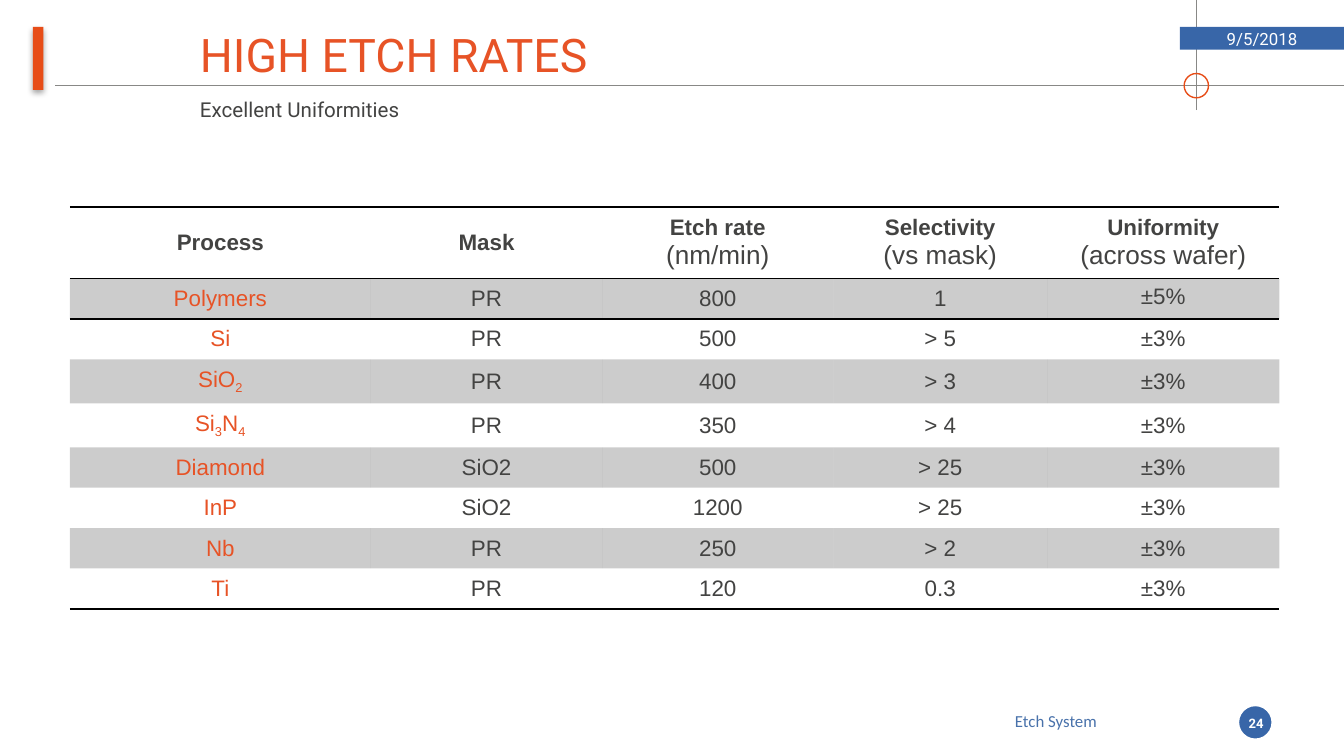
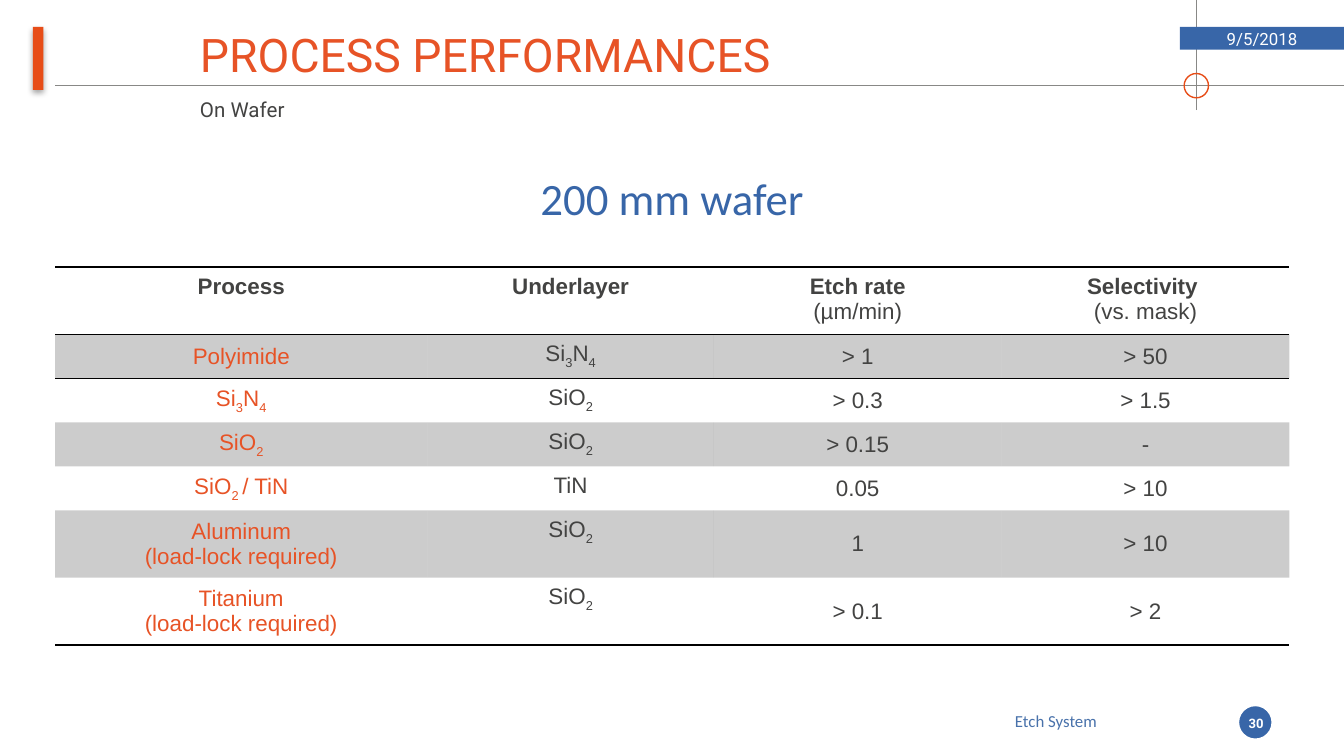
from dataclasses import dataclass
from typing import Any, Optional

import lxml.etree
import pptx
import pptx.dml.color
import pptx.enum.shapes
import pptx.enum.text
import pptx.oxml
import pptx.oxml.ns
import pptx.util

Cm = pptx.util.Cm
Pt = pptx.util.Pt
qn = pptx.oxml.ns.qn
Shapes = pptx.enum.shapes.MSO_SHAPE
Align = pptx.enum.text.PP_ALIGN
Anchor = pptx.enum.text.MSO_ANCHOR

COLORS = {
    "title": "E75326",
    "accent": "E74D18",
    "blue": "3866A8",
    "footer": "4972AB",
    "text": "434342",
    "rule": "888886",
    "white": "FFFFFF",
    "black": "000000",
}
SLIDE_WIDTH, SLIDE_HEIGHT = 25.4, 14.29
RULE_Y, CROSS_X, CROSS_SIZE = 1.62, 22.61, 0.46
NO_STYLE_NO_GRID = "{2D5ABB26-0587-4C30-8999-92F81FD0307C}"
NAMESPACE = pptx.oxml.ns.nsdecls("a")


@dataclass(frozen=True)
class Box:
    left: float
    top: float
    width: float
    height: float

    def lengths(self) -> list[int]:
        return [Cm(value) for value in (self.left, self.top, self.width, self.height)]


@dataclass(frozen=True)
class Label:
    box: Box
    size: float
    color: str
    font: str = "Roboto"
    align: Any = Align.CENTER
    anchor: Any = Anchor.MIDDLE
    inset: tuple[float, float] = (0, 0)
    bold: bool = False
    fill: Optional[str] = None


@dataclass(frozen=True)
class ProcessTable:
    left: float
    top: float
    column_widths: list[float]
    row_heights: list[float]
    rows: list[list[str]]
    unit_size: float
    header_anchor: Any = Anchor.MIDDLE
    top_columns: tuple[int, ...] = ()
    tight_cells: tuple[tuple[int, int], ...] = ()


@dataclass(frozen=True)
class ResultSlide:
    title: str
    subtitle: str
    number: str
    table: ProcessTable
    heading: Optional[str] = None


TITLE = Label(Box(3.53, 0.36, 18.77, 1.32), 24.8, "title", align=Align.LEFT, inset=(0.25, 0.13))
SUBTITLE = Label(Box(3.53, 1.7, 7.01, 0.71), 11, "text", align=Align.LEFT,
                 anchor=Anchor.TOP, inset=(0.25, 0.13))
DATE = Label(Box(22.3, 0.51, 3.1, 0.43), 9, "white", fill="blue")
PRODUCT = Label(Box(17.3, 13.31, 5.31, 0.64), 9, "footer", font="Calibri", fill="white")
NUMBER = Label(Box(23.32, 13.31, 0.84, 0.71), 7, "white", bold=True)
HEADING = Label(Box(0, 3.1, SLIDE_WIDTH, 1.27), 24, "blue", font="Calibri",
                anchor=Anchor.TOP, inset=(0.25, 0.13))

SLIDES = [
    ResultSlide(
        "HIGH ETCH RATES", "Excellent Uniformities", "24",
        ProcessTable(
            1.32, 3.91, [5.69, 4.37, 4.37, 4.04, 4.39],
            [1.28, 0.73, 0.73, 0.79, 0.79, 0.73, 0.73, 0.73, 0.73],
            [
                ["Process", "Mask", "Etch rate\n(nm/min)", "Selectivity\n(vs mask)",
                 "Uniformity\n(across wafer)"],
                ["Polymers", "PR", "800", "1", "±5%"],
                ["Si", "PR", "500", "> 5", "±3%"],
                ["SiO|2", "PR", "400", "> 3", "±3%"],
                ["Si|3|N|4", "PR", "350", "> 4", "±3%"],
                ["Diamond", "SiO2", "500", "> 25", "±3%"],
                ["InP", "SiO2", "1200", "> 25", "±3%"],
                ["Nb", "PR", "250", "> 2", "±3%"],
                ["Ti", "PR", "120", "0.3", "±3%"],
            ],
            unit_size=14, tight_cells=((1, 4),),
        ),
    ),
    ResultSlide(
        "PROCESS PERFORMANCES", "On Wafer", "30",
        ProcessTable(
            1.04, 5.05, [7.04, 5.41, 5.44, 5.44],
            [1.26, 0.83, 0.83, 0.83, 0.83, 1.27, 1.27],
            [
                ["Process", "Underlayer", "Etch rate\n(µm/min)", "Selectivity \n(vs. mask)"],
                ["Polyimide", "Si|3|N|4", "> 1", "> 50"],
                ["Si|3|N|4", "SiO|2", "> 0.3", "> 1.5"],
                ["SiO|2", "SiO|2", "> 0.15", "-"],
                ["SiO|2 |/ TiN", "TiN", "0.05", "> 10"],
                ["Aluminum\n(load-lock required)", "SiO|2", "1", "> 10"],
                ["Titanium\n(load-lock required)", "SiO|2", "> 0.1", "> 2"],
            ],
            unit_size=12, header_anchor=Anchor.TOP, top_columns=(1,),
        ),
        heading="200 mm wafer",
    ),
]


def rgb(name: str) -> pptx.dml.color.RGBColor:
    return pptx.dml.color.RGBColor.from_string(COLORS[name])


def format_font(font: Any, name: str, size: float, color: str, bold: bool = False) -> None:
    font.name = name
    font.size = Pt(size)
    font.bold = bold
    font.color.rgb = rgb(color)


def add_rule(slide: Any, start: tuple[float, float], end: tuple[float, float]) -> None:
    connector = slide.shapes.add_connector(
        pptx.enum.shapes.MSO_CONNECTOR.STRAIGHT, *[Cm(value) for value in start + end])
    connector.line.color.rgb = rgb("rule")
    connector.line.width = Pt(0.75)
    lxml.etree.SubElement(connector._element.spPr, qn("a:effectLst"))


def add_figure(slide: Any, kind: Any, box: Box, fill: Optional[str] = None,
               line: Optional[str] = None, line_width: float = 0.75) -> Any:
    shape = slide.shapes.add_shape(kind, *box.lengths())
    shape.shadow.inherit = False
    if fill:
        shape.fill.solid()
        shape.fill.fore_color.rgb = rgb(fill)
    else:
        shape.fill.background()
    if line:
        shape.line.color.rgb = rgb(line)
        shape.line.width = Pt(line_width)
    else:
        shape.line.fill.background()
    return shape


def add_label(slide: Any, label: Label, text: str) -> None:
    if label.fill:
        shape = add_figure(slide, Shapes.RECTANGLE, label.box, label.fill)
    else:
        shape = slide.shapes.add_textbox(*label.box.lengths())
    frame = shape.text_frame
    frame.word_wrap = True
    frame.vertical_anchor = label.anchor
    frame.margin_left = frame.margin_right = Cm(label.inset[0])
    frame.margin_top = frame.margin_bottom = Cm(label.inset[1])
    frame.text = text
    paragraph = frame.paragraphs[0]
    paragraph.alignment = label.align
    format_font(paragraph.runs[0].font, label.font, label.size, label.color, label.bold)


def add_bar_shadow(shape: Any) -> None:
    effects = shape._element.spPr.find(qn("a:effectLst"))
    effects.append(pptx.oxml.parse_xml(
        f'<a:outerShdw {NAMESPACE} blurRad="{Pt(3.1)}" dist="{Pt(1.8)}" dir="5400000"'
        f' rotWithShape="0"><a:srgbClr val="{COLORS["black"]}"><a:alpha val="35000"/>'
        '</a:srgbClr></a:outerShdw>'))


def add_frame(slide: Any) -> None:
    add_rule(slide, (1.04, RULE_Y), (SLIDE_WIDTH, RULE_Y))
    add_rule(slide, (CROSS_X, 2.08), (CROSS_X, 0))
    target = Box(CROSS_X - CROSS_SIZE / 2, RULE_Y - CROSS_SIZE / 2, CROSS_SIZE, CROSS_SIZE)
    add_figure(slide, Shapes.OVAL, target, line="accent")
    bar = add_figure(slide, Shapes.RECTANGLE, Box(0.62, 0.51, 0.2, 1.19), "accent")
    add_bar_shadow(bar)
    add_figure(slide, Shapes.OVAL, Box(23.38, 13.31, 0.69, 0.69), "blue", "white", 2.25)


def fill_cell(cell: Any, shaded: bool, sides: str) -> None:
    properties = cell._tc.get_or_add_tcPr()
    for side in sides:
        properties.append(pptx.oxml.parse_xml(
            f'<a:ln{side} {NAMESPACE} w="{Pt(1)}"><a:solidFill>'
            f'<a:srgbClr val="{COLORS["black"]}"/></a:solidFill></a:ln{side}>'))
    if not shaded:
        cell.fill.background()
        return
    cell.fill.solid()
    cell.fill.fore_color.rgb = rgb("black")
    color = properties.find(qn("a:solidFill")).find(qn("a:srgbClr"))
    lxml.etree.SubElement(color, qn("a:alpha")).set("val", "20000")


def write_cell(cell: Any, text: str, color: str, header: bool, unit_size: float,
               spacing: Optional[float]) -> None:
    frame = cell.text_frame
    for index, line in enumerate(text.split("\n")):
        paragraph = frame.add_paragraph() if index else frame.paragraphs[0]
        paragraph.alignment = Align.CENTER
        if spacing:
            paragraph.line_spacing = spacing
        size = unit_size if header and index else 12
        for position, part in enumerate(line.split("|")):
            run = paragraph.add_run()
            run.text = part
            format_font(run.font, "Arial", size, color, header and index == 0)
            if position % 2:
                run._r.get_or_add_rPr().set("baseline", "-25000")


def add_process_table(slide: Any, layout: ProcessTable) -> None:
    box = Box(layout.left, layout.top, sum(layout.column_widths), sum(layout.row_heights))
    last = len(layout.rows) - 1
    table = slide.shapes.add_table(
        last + 1, len(layout.column_widths), *box.lengths()).table
    table.first_row = table.horz_banding = False
    table._tbl.tblPr.find(qn("a:tableStyleId")).text = NO_STYLE_NO_GRID
    for column, width in zip(table.columns, layout.column_widths):
        column.width = Cm(width)
    for row, height in zip(table.rows, layout.row_heights):
        row.height = Cm(height)
    borders = {0: "TB", 1: "T", last: "B"}
    for row_index, values in enumerate(layout.rows):
        header = row_index == 0
        for column_index, text in enumerate(values):
            cell = table.cell(row_index, column_index)
            color = "title" if column_index == 0 and not header else "text"
            tight = (row_index, column_index) in layout.tight_cells
            write_cell(cell, text, color, header, layout.unit_size, 0.7 if tight else None)
            top = column_index in layout.top_columns
            body_anchor = Anchor.TOP if top else Anchor.MIDDLE
            cell.vertical_anchor = layout.header_anchor if header else body_anchor
            fill_cell(cell, row_index % 2 == 1, borders.get(row_index, ""))


def add_result_slide(presentation: Any, content: ResultSlide) -> None:
    slide = presentation.slides.add_slide(presentation.slide_layouts[6])
    add_frame(slide)
    add_label(slide, TITLE, content.title)
    add_label(slide, DATE, "9/5/2018")
    add_label(slide, PRODUCT, "Etch System")
    add_label(slide, NUMBER, content.number)
    add_label(slide, SUBTITLE, content.subtitle)
    if content.heading:
        add_label(slide, HEADING, content.heading)
    add_process_table(slide, content.table)


def main() -> None:
    presentation = pptx.Presentation()
    presentation.slide_width = Cm(SLIDE_WIDTH)
    presentation.slide_height = Cm(SLIDE_HEIGHT)
    for content in SLIDES:
        add_result_slide(presentation, content)
    presentation.save("out.pptx")


if __name__ == "__main__":
    main()
